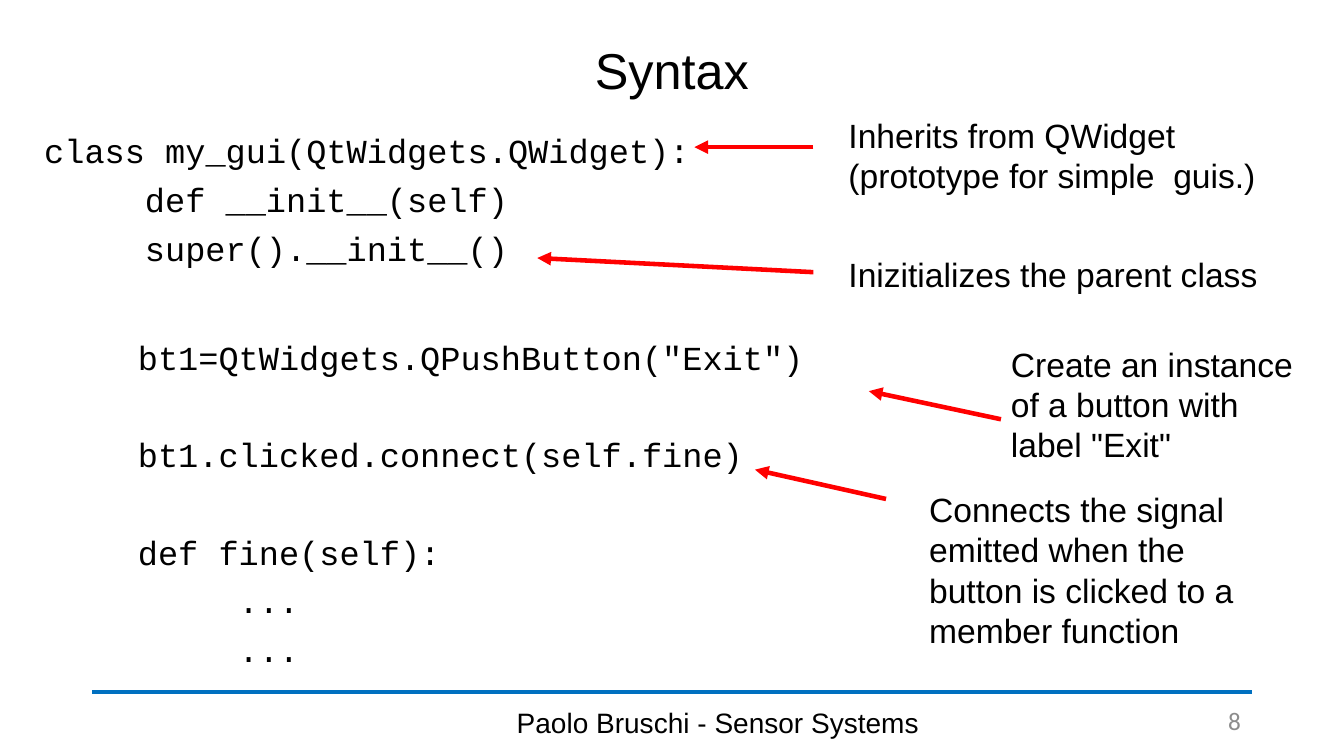
"""Build the annotated class syntax slide."""
from dataclasses import dataclass

from lxml import etree
from pptx import Presentation
from pptx.dml.color import RGBColor
from pptx.enum.shapes import MSO_CONNECTOR
from pptx.enum.text import MSO_ANCHOR, MSO_AUTO_SIZE, PP_ALIGN
from pptx.oxml.ns import qn
from pptx.util import Pt

STRAIGHT = MSO_CONNECTOR.STRAIGHT
TOP, MIDDLE = MSO_ANCHOR.TOP, MSO_ANCHOR.MIDDLE
LEFT, CENTER, RIGHT = PP_ALIGN.LEFT, PP_ALIGN.CENTER, PP_ALIGN.RIGHT
GROW, FIXED = MSO_AUTO_SIZE.SHAPE_TO_FIT_TEXT, MSO_AUTO_SIZE.NONE

BLACK, GREY, RED, BLUE = "000000", "8C8C8C", "FF0000", "0070C0"
SANS, MONO, NUMBER_FONT = "Arial", "Courier New", "Calibri"
LEADING = 1.2
INDENT = 72
CODE_GAP = 6
SKIPPED_LINE = 24 * LEADING + CODE_GAP


@dataclass
class Line:
    text: str
    level: int = 0
    before: float = 0


@dataclass
class TextBlock:
    box: tuple[float, float, float, float]
    lines: list[Line]
    size: float = 24
    font: str = SANS
    color: str = BLACK
    after: float = 0
    align: PP_ALIGN = LEFT
    anchor: MSO_ANCHOR = TOP
    autosize: MSO_AUTO_SIZE = GROW


@dataclass
class Stroke:
    start: tuple[float, float]
    end: tuple[float, float]
    color: str = RED
    width: float = 3.25
    arrow: bool = True


def code(box: tuple, lines: list[Line]) -> TextBlock:
    return TextBlock(box, lines, font=MONO, after=CODE_GAP)


def note(box: tuple, text: str) -> TextBlock:
    return TextBlock(box, [Line(text)], after=12)


BLOCKS = [
    TextBlock((362, 500.4, 304, 32), [Line("Paolo Bruschi - Sensor Systems")], size=20),
    TextBlock((824.4, 500.4, 69, 28.8), [Line("8")], size=18, font=NUMBER_FONT,
              color=GREY, align=RIGHT, anchor=MIDDLE, autosize=FIXED),
    code((24.5, 89.3, 490, 106.6), [
        Line("class my_gui(QtWidgets.QWidget):"),
        Line("def __init__(self)", 1),
        Line("super().__init__()", 1),
    ]),
    code((19.4, 236.9, 647, 247), [
        Line('bt1=QtWidgets.QPushButton("Exit")', 1),
        Line("bt1.clicked.connect(self.fine)", 1, SKIPPED_LINE),
        Line("def fine(self):", 1, SKIPPED_LINE),
        Line("...", 2),
        Line("...", 2),
    ]),
    note((599, 78.5, 348, 65.5), "Inherits from QWidget\n(prototype for simple  guis.)"),
    note((599, 177.8, 355, 36), "Inizitializes the parent class"),
    note((715, 241.9, 232.6, 94.3), 'Create an instance of a button with label "Exit"'),
    note((656.6, 345.6, 232.6, 123.8),
         "Connects the signal emitted when the button is clicked to a member function"),
]

STROKES = [
    Stroke((66, 494), (894, 494), BLUE, 2.75, arrow=False),
    Stroke((581, 105.1), (496, 105.1)),
    Stroke((581, 194.4), (383.8, 184.3)),
    Stroke((715, 299.5), (620.6, 279.4)),
    Stroke((632.9, 356.4), (539.3, 335.5)),
]


def paint(color_format, color: str) -> None:
    color_format.rgb = RGBColor.from_string(color)


def add_run(paragraph, text: str, size: float, font: str, color: str) -> None:
    run = paragraph.add_run()
    run.text = text
    run.font.size = Pt(size)
    run.font.name = font
    paint(run.font.color, color)


def draw_title(slide, text: str) -> None:
    title = slide.shapes.title
    title.left, title.top, title.width, title.height = map(Pt, (66, 26, 828, 52))
    title.text_frame.vertical_anchor = MIDDLE
    title.text_frame.auto_size = FIXED
    paragraph = title.text_frame.paragraphs[0]
    paragraph.alignment = CENTER
    paragraph.line_spacing = 0.9
    add_run(paragraph, text, 36, SANS, BLACK)


def draw_block(slide, block: TextBlock) -> None:
    frame = slide.shapes.add_textbox(*map(Pt, block.box)).text_frame
    frame.word_wrap = True
    frame.auto_size = block.autosize
    frame.vertical_anchor = block.anchor
    for index, line in enumerate(block.lines):
        paragraph = frame.add_paragraph() if index else frame.paragraphs[0]
        paragraph.alignment = block.align
        paragraph.line_spacing = Pt(block.size * LEADING)
        paragraph.space_before = Pt(line.before)
        paragraph.space_after = Pt(block.after)
        if line.level:
            properties = paragraph._p.get_or_add_pPr()
            properties.set("marL", str(Pt(line.level * INDENT)))
            properties.set("indent", "0")
        for part, text in enumerate(line.text.split("\n")):
            if part:
                paragraph.add_line_break()
            add_run(paragraph, text, block.size, block.font, block.color)


def draw_stroke(slide, stroke: Stroke) -> None:
    connector = slide.shapes.add_connector(
        STRAIGHT, *map(Pt, stroke.start + stroke.end))
    connector.line.width = Pt(stroke.width)
    paint(connector.line.color, stroke.color)
    if stroke.arrow:
        etree.SubElement(connector.line._get_or_add_ln(), qn("a:tailEnd"), type="triangle")
    etree.SubElement(connector._element.spPr, qn("a:effectLst"))


def main() -> None:
    deck = Presentation()
    deck.slide_width, deck.slide_height = Pt(960), Pt(540)
    slide = deck.slides.add_slide(deck.slide_layouts[5])
    draw_title(slide, "Syntax")
    for block in BLOCKS:
        draw_block(slide, block)
    for stroke in STROKES:
        draw_stroke(slide, stroke)
    deck.save("out.pptx")


if __name__ == "__main__":
    main()
